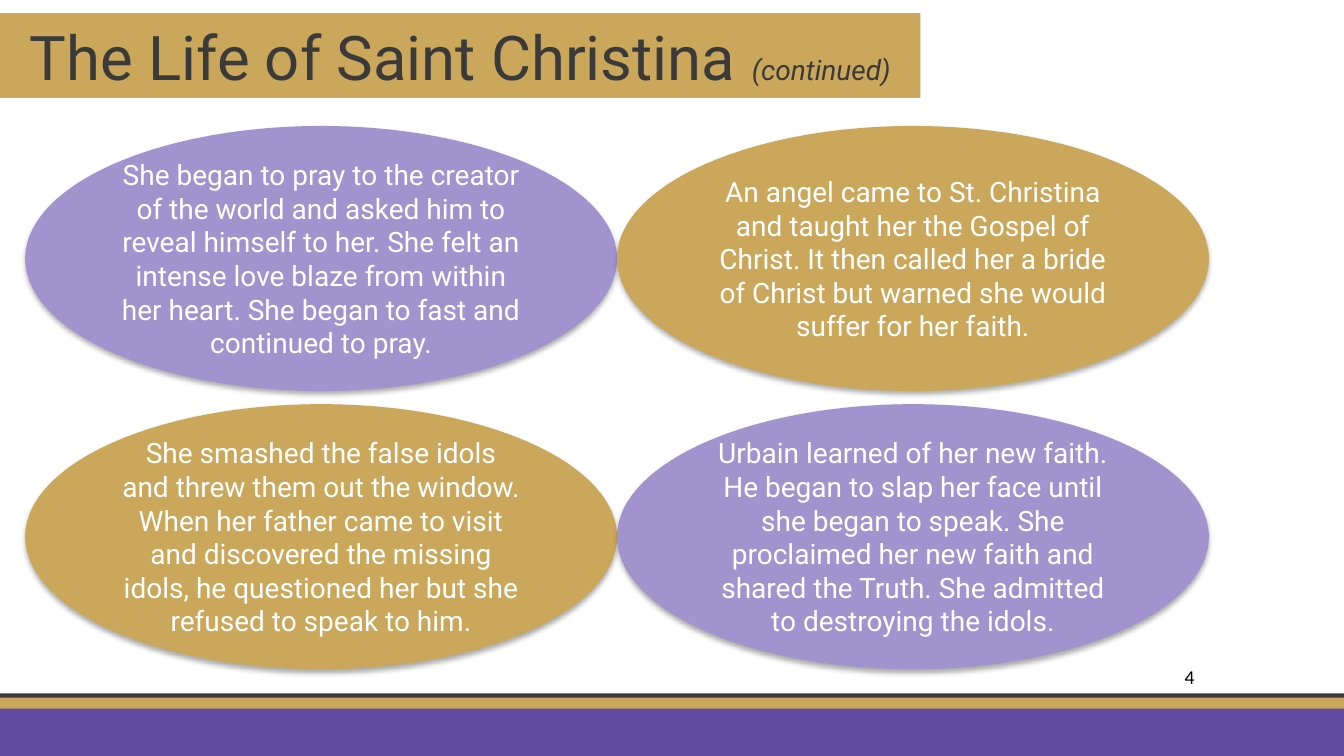
from pptx import Presentation
from pptx.dml.color import RGBColor
from pptx.enum.shapes import MSO_SHAPE
from pptx.enum.text import MSO_ANCHOR, MSO_AUTO_SIZE, PP_ALIGN
from pptx.oxml import parse_xml
from pptx.oxml.ns import nsdecls, qn
from pptx.util import Inches, Pt

RECT, OVAL = MSO_SHAPE.RECTANGLE, MSO_SHAPE.OVAL
MIDDLE, CENTER = MSO_ANCHOR.MIDDLE, PP_ALIGN.CENTER
GROW = MSO_AUTO_SIZE.SHAPE_TO_FIT_TEXT

TITLE = ("The Life of Saint Christina ", "(continued)")
NUMBER = "4"
# Read left to right, then down
STORY = [
    ("She began to pray to the creator of the world and asked him to reveal "
     "himself to her. She felt an intense love blaze from within her heart. "
     "She began to fast and continued to pray.", "lilac"),
    ("An angel came to St. Christina and taught her the Gospel of Christ. "
     "It then called her a bride of Christ but warned she would suffer for "
     "her faith.", "gold"),
    ("She smashed the false idols and threw them out the window. When her "
     "father came to visit and discovered the missing idols, he questioned "
     "her but she refused to speak to him.", "gold"),
    ("Urbain learned of her new faith. He began to slap her face until she "
     "began to speak. She proclaimed her new faith and shared the Truth. "
     "She admitted to destroying the idols.", "lilac"),
]
BANDS = [(6.88, 0.06, "dark"), (6.92, 0.12, "gold"), (7.03, 0.47, "purple")]

THEME = {
    "dark": "3A3A3A", "gold": "CAA75B", "purple": "614BA3",
    "lilac": "A193CD", "white": "FFFFFF", "black": "000000",
    "font": "Roboto", "plain": "Calibri",
    "title": 44, "body": 20, "number": 14,
}
WIDE, HIGH = 13.33, 7.5
LEFT, TOP, OVAL_W, OVAL_H, ROW_GAP = 0.25, 1.25, 5.87, 2.63, 0.13


def color(name):
    return RGBColor.from_string(THEME[name])


def style(run, size, tint, face="font"):
    run.font.size = Pt(THEME[size])
    run.font.name = THEME[face]
    run.font.color.rgb = color(tint)


def paint(shape, tint):
    shape.fill.solid()
    shape.fill.fore_color.rgb = color(tint)
    shape.line.fill.background()


def add_form(slide, kind, box, tint):
    form = slide.shapes.add_shape(kind, *map(Inches, box))
    form.shadow.inherit = False
    paint(form, tint)
    return form


def drop_shadow(shape):
    effects = shape._element.spPr.find(qn("a:effectLst"))
    effects.append(parse_xml(
        f'<a:outerShdw {nsdecls("a")} blurRad="{Pt(3.5)}" dist="{Pt(2.2)}" '
        'dir="5400000" rotWithShape="0"><a:srgbClr val="000000">'
        '<a:alpha val="32000"/></a:srgbClr></a:outerShdw>'))


def add_title(slide):
    title = slide.shapes.title
    title.left, title.top = Inches(0), Inches(0.13)
    title.width, title.height = Inches(9.13), Inches(0.84)
    paint(title, "gold")
    frame = title.text_frame
    frame.word_wrap = True
    frame.auto_size = GROW
    frame.vertical_anchor = MIDDLE
    para = frame.paragraphs[0]
    para.alignment = CENTER
    for text, size in zip(TITLE, ("title", "body")):
        run = para.add_run()
        run.text = text
        style(run, size, "dark")
    run.font.italic = True


def add_story(slide):
    for i, (text, tint) in enumerate(STORY):
        row, col = divmod(i, 2)
        box = (LEFT + col * OVAL_W, TOP + row * (OVAL_H + ROW_GAP),
               OVAL_W, OVAL_H)
        oval = add_form(slide, OVAL, box, tint)
        drop_shadow(oval)
        frame = oval.text_frame
        frame.text = text
        frame.word_wrap = True
        frame.vertical_anchor = MIDDLE
        para = frame.paragraphs[0]
        para.alignment = CENTER
        style(para.runs[0], "body", "white")


def add_number(slide):
    box = slide.shapes.add_textbox(
        Inches(11.65), Inches(6.55), Inches(0.83), Inches(0.34))
    frame = box.text_frame
    frame.text = NUMBER
    frame.word_wrap = True
    frame.auto_size = GROW
    style(frame.paragraphs[0].runs[0], "number", "black", "plain")


def main():
    deck = Presentation()
    deck.slide_width, deck.slide_height = Inches(WIDE), Inches(HIGH)
    slide = deck.slides.add_slide(deck.slide_layouts[5])
    for top, height, tint in BANDS:
        add_form(slide, RECT, (0, top, WIDE, height), tint)
    add_story(slide)
    add_title(slide)
    add_number(slide)
    deck.save("out.pptx")


if __name__ == "__main__":
    main()
